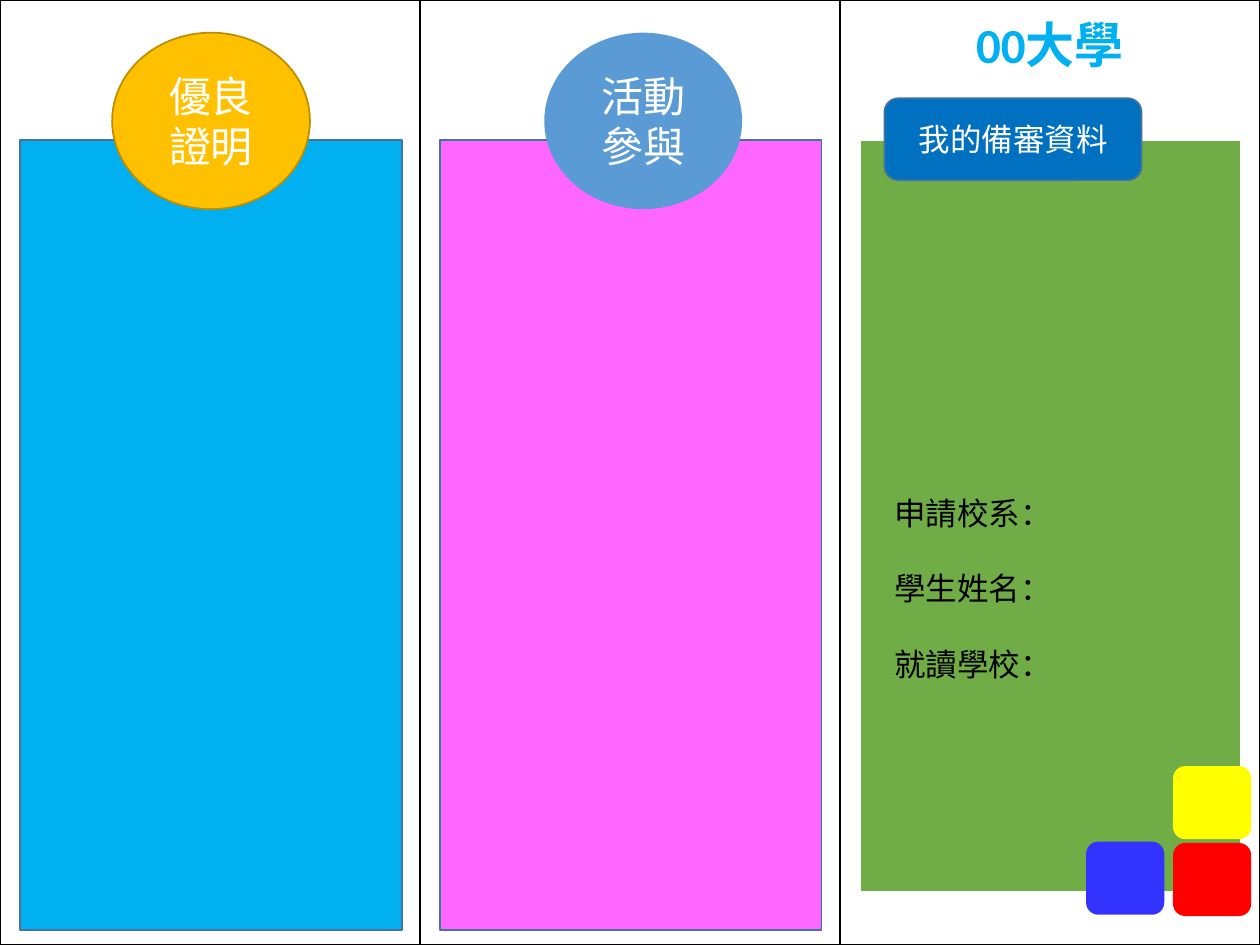
import pptx
import pptx.util
import pptx.dml.color
import pptx.enum.shapes
import pptx.enum.text
import pptx.oxml
import pptx.oxml.ns
from lxml import etree

Inches, Pt = pptx.util.Inches, pptx.util.Pt
KIND = pptx.enum.shapes.MSO_SHAPE
ALIGN = pptx.enum.text.PP_ALIGN
ANCHOR = pptx.enum.text.MSO_ANCHOR

THEME = {
    "sky": "00B0F0", "gold": "FFC000", "amber": "BD8E00", "pink": "FF66FF",
    "steel": "5B9BD5", "edge": "43739E", "green": "70AD47", "navy": "0070C0",
    "yellow": "FFFF00", "red": "FF0000", "blue": "3333FF",
    "white": "FFFFFF", "black": "000000",
    "latin": "Calibri", "cjk": "Noto Sans CJK SC",
    "title": 28, "badge": 24, "body": 18,
}

WIDE, HIGH = 10, 7.5
TITLE = "00大學"
FIELDS = ["申請校系：", "學生姓名：", "就讀學校："]

# left, fill, badge left, badge fill, badge line, badge text
PANELS = [
    (0.16, "sky", 0.89, "gold", "amber", "優良\n證明"),
    (3.49, "pink", 4.32, "steel", None, "活動\n參與"),
]
COVER = (6.82, 1.11, 3.03, 5.97)
LABEL = (7.02, 0.78, 2.04, 0.65)
TILES = [(9.31, 6.08, "yellow"), (9.31, 6.69, "red"), (8.62, 6.68, "blue")]


def color(name):
    return pptx.dml.color.RGBColor.from_string(THEME[name])


def style(frame, size, ink, font="cjk", align=ALIGN.CENTER, bold=False):
    """Format every run, naming the font for Latin and East Asian text."""
    for para in frame.paragraphs:
        para.alignment = align
        for run in para.runs:
            run.font.size = Pt(THEME[size])
            run.font.bold = bold
            run.font.color.rgb = color(ink)
            run.font.name = THEME[font]
            ea = etree.SubElement(run.font._element, pptx.oxml.ns.qn("a:ea"))
            ea.set("typeface", THEME["cjk"])


def block(slide, kind, box, fill, line=None, width=1, text="", size="body"):
    shape = slide.shapes.add_shape(kind, *map(Inches, box))
    shape.shadow.inherit = False
    shape.fill.solid()
    shape.fill.fore_color.rgb = color(fill)
    if line:
        shape.line.color.rgb = color(line)
        shape.line.width = Pt(width)
    else:
        shape.line.fill.background()
    if text:
        frame = shape.text_frame
        frame.text = text
        frame.vertical_anchor = ANCHOR.MIDDLE
        style(frame, size, "white")


def border(cell):
    props = cell._tc.get_or_add_tcPr()
    for i, side in enumerate("LRTB"):
        props.insert(i, pptx.oxml.parse_xml(
            f'<a:ln{side} {pptx.oxml.ns.nsdecls("a")} w="{Pt(1)}"><a:solidFill>'
            f'<a:srgbClr val="{THEME["black"]}"/></a:solidFill></a:ln{side}>'))


def folds(slide):
    """Three bordered columns, with the title in the last."""
    table = slide.shapes.add_table(
        1, 3, 0, 0, Inches(WIDE), Inches(HIGH)).table
    table.first_row = table.horz_banding = False
    for cell in table.iter_cells():
        cell.fill.background()
        border(cell)
    last = table.cell(0, 2).text_frame
    last.text = TITLE
    style(last, "title", "sky", "latin", bold=True)


def fields(slide):
    box = slide.shapes.add_textbox(*map(Inches, (7, 3.57, 2.52, 1.84)))
    frame = box.text_frame
    frame.word_wrap = True
    frame.auto_size = pptx.enum.text.MSO_AUTO_SIZE.SHAPE_TO_FIT_TEXT
    frame.text = "\n".join(FIELDS)
    style(frame, "body", "black", align=ALIGN.LEFT)
    for para in frame.paragraphs:
        para.line_spacing = 2.0


def main():
    deck = pptx.Presentation()
    deck.slide_width, deck.slide_height = Inches(WIDE), Inches(HIGH)
    slide = deck.slides.add_slide(deck.slide_layouts[6])
    folds(slide)
    for left, fill, spot, tint, line, text in PANELS:
        block(slide, KIND.RECTANGLE, (left, 1.11, 3.03, 6.27), fill, "edge")
        block(slide, KIND.OVAL, (spot, 0.26, 1.57, 1.4), tint, line,
              text=text, size="badge")
    block(slide, KIND.RECTANGLE, COVER, "green", "white", 1.5)
    block(slide, KIND.ROUNDED_RECTANGLE, LABEL, "navy", "edge",
          text="我的備審資料")
    for left, top, fill in TILES:
        block(slide, KIND.ROUNDED_RECTANGLE, (left, top, 0.62, 0.58), fill)
    fields(slide)
    deck.save("out.pptx")


if __name__ == "__main__":
    main()
